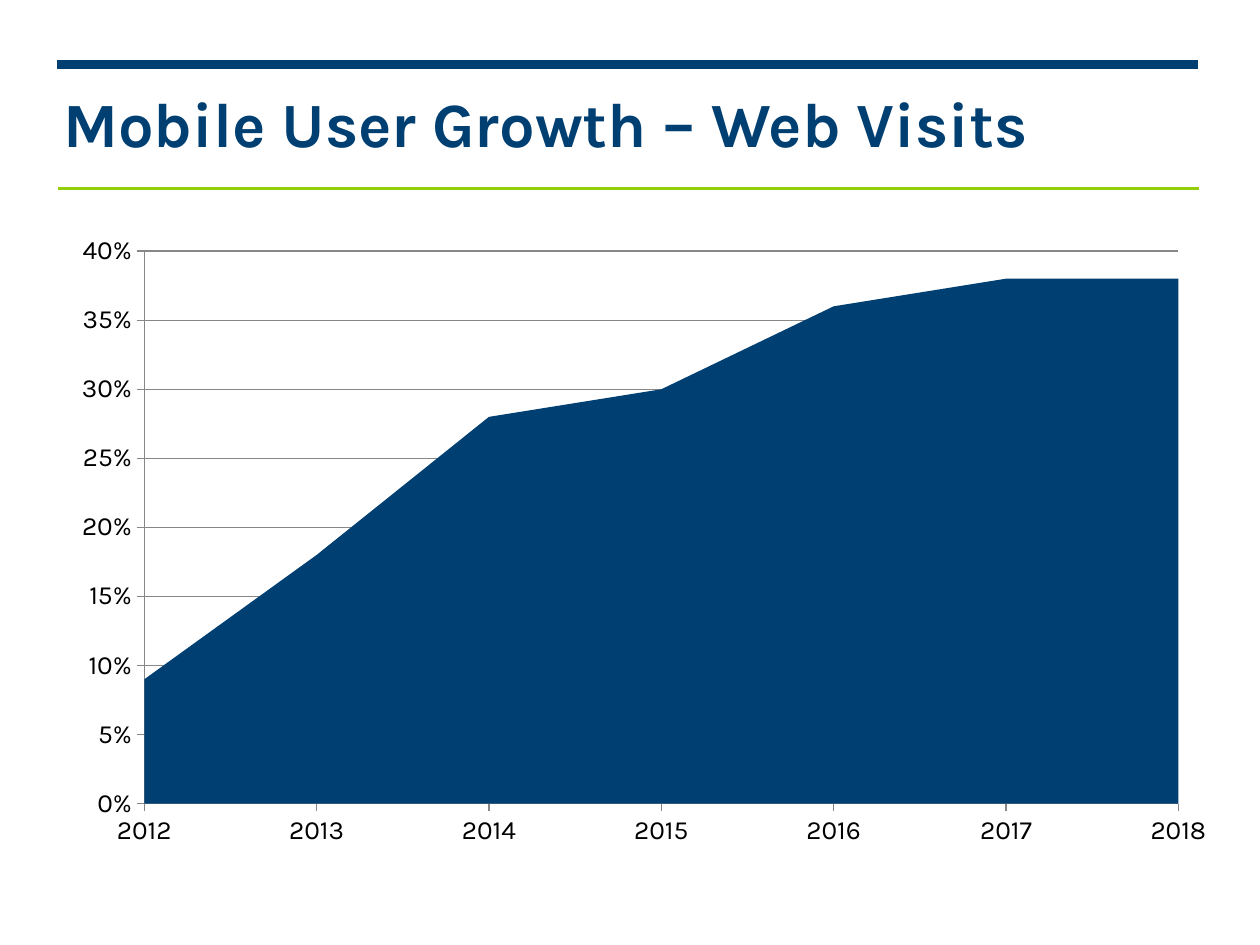
import pptx
import pptx.util
import pptx.dml.color
import pptx.chart.data
import pptx.enum.chart
import pptx.enum.shapes
import pptx.enum.text
import pptx.oxml
import pptx.oxml.ns

Pt = pptx.util.Pt
HUES = {"navy": "003F72", "lime": "94CE09", "white": "FFFFFF",
        "black": "000000", "gray": "878787"}
YEARS = [str(year) for year in range(2012, 2019)]
SHARES = [0.09, 0.18, 0.28, 0.3, 0.36, 0.38, 0.38]


def hue(name):
    return pptx.dml.color.RGBColor.from_string(HUES[name])


class Deck:
    """Holds the style and the current slide."""

    font = "Karla"

    def __init__(self, wide, high):
        self.prs = pptx.Presentation()
        self.prs.slide_width, self.prs.slide_height = Pt(wide), Pt(high)
        self.slide = self.prs.slides.add_slide(self.prs.slide_layouts[5])

    def style(self, font, size, color, bold=False):
        font.name, font.size, font.bold = self.font, Pt(size), bold
        font.color.rgb = hue(color)

    def title(self, text, *box):
        shape = self.slide.shapes.title
        shape.left, shape.top, shape.width, shape.height = map(Pt, box)
        frame = shape.text_frame
        frame.margin_left = frame.margin_right = 0
        frame.margin_top = frame.margin_bottom = 0
        frame.word_wrap = True
        frame.auto_size = pptx.enum.text.MSO_AUTO_SIZE.NONE
        frame.vertical_anchor = pptx.enum.text.MSO_ANCHOR.BOTTOM
        para = frame.paragraphs[0]
        para.alignment = pptx.enum.text.PP_ALIGN.LEFT
        run = para.add_run()
        run.text = text
        self.style(run.font, 36, "navy", True)

    def bar(self, color, *box):
        kind = pptx.enum.shapes.MSO_SHAPE.RECTANGLE
        shape = self.slide.shapes.add_shape(kind, *map(Pt, box))
        shape.shadow.inherit = False
        shape.fill.solid()
        shape.fill.fore_color.rgb = hue(color)
        shape.line.color.rgb = hue("white")
        shape.line.width = Pt(0.75)

    def area(self, name, cats, vals, *box):
        data = pptx.chart.data.CategoryChartData(number_format="0%")
        data.categories = cats
        data.add_series(name, vals)
        kind = pptx.enum.chart.XL_CHART_TYPE.AREA
        chart = self.slide.shapes.add_chart(kind, *map(Pt, box), data).chart
        chart.has_legend = chart.has_title = False
        self.style(chart.font, 18, "black")
        fill = chart.plots[0].series[0].format.fill
        fill.solid()
        fill.fore_color.rgb = hue("navy")
        for axis in (chart.category_axis, chart.value_axis):
            self.axis(axis)
        self.scale(chart.value_axis)
        self.layout(chart, x=0.07, y=0.04, w=0.89, h=0.87)

    def axis(self, axis):
        axis.major_tick_mark = pptx.enum.chart.XL_TICK_MARK.OUTSIDE
        axis.minor_tick_mark = pptx.enum.chart.XL_TICK_MARK.NONE
        axis.has_major_gridlines = False
        self.style(axis.tick_labels.font, 15, "black")
        self.rule(axis.format.line)

    def scale(self, axis):
        axis.minimum_scale, axis.maximum_scale = 0, 0.4
        axis.major_unit = 0.05
        axis.has_major_gridlines = True
        self.rule(axis.major_gridlines.format.line)
        axis.tick_labels.number_format = "0%"
        axis.tick_labels.number_format_is_linked = False
        # Start the area on the axis itself
        cross = axis._element.find(pptx.oxml.ns.qn("c:crossBetween"))
        cross.set("val", "midCat")

    def rule(self, line):
        line.color.rgb = hue("gray")
        line.width = Pt(0.75)

    def layout(self, chart, **spans):
        # Fix the inner plot as shares of the chart frame
        plot = chart._chartSpace.chart.plotArea
        old = plot.find(pptx.oxml.ns.qn("c:layout"))
        if old is not None:
            plot.remove(old)
        marks = "".join(f'<c:{key} val="{val}"/>' for key, val in spans.items())
        plot.insert(0, pptx.oxml.parse_xml(
            f'<c:layout {pptx.oxml.ns.nsdecls("c")}><c:manualLayout>'
            '<c:layoutTarget val="inner"/><c:xMode val="edge"/>'
            f'<c:yMode val="edge"/>{marks}</c:manualLayout></c:layout>'))


def main():
    deck = Deck(720, 540)
    # Bars above and below the title
    deck.bar("navy", 32.5, 34, 652.3, 5.6)
    deck.bar("lime", 33, 106.5, 652.3, 2.5)
    # Title
    deck.title("Mobile User Growth – Web Visits", 36, 1.5, 648, 90)
    # Share of visits by year
    deck.area("Series 1", YEARS, SHARES, 36, 129, 664, 363)
    deck.prs.save("out.pptx")


if __name__ == "__main__":
    main()
